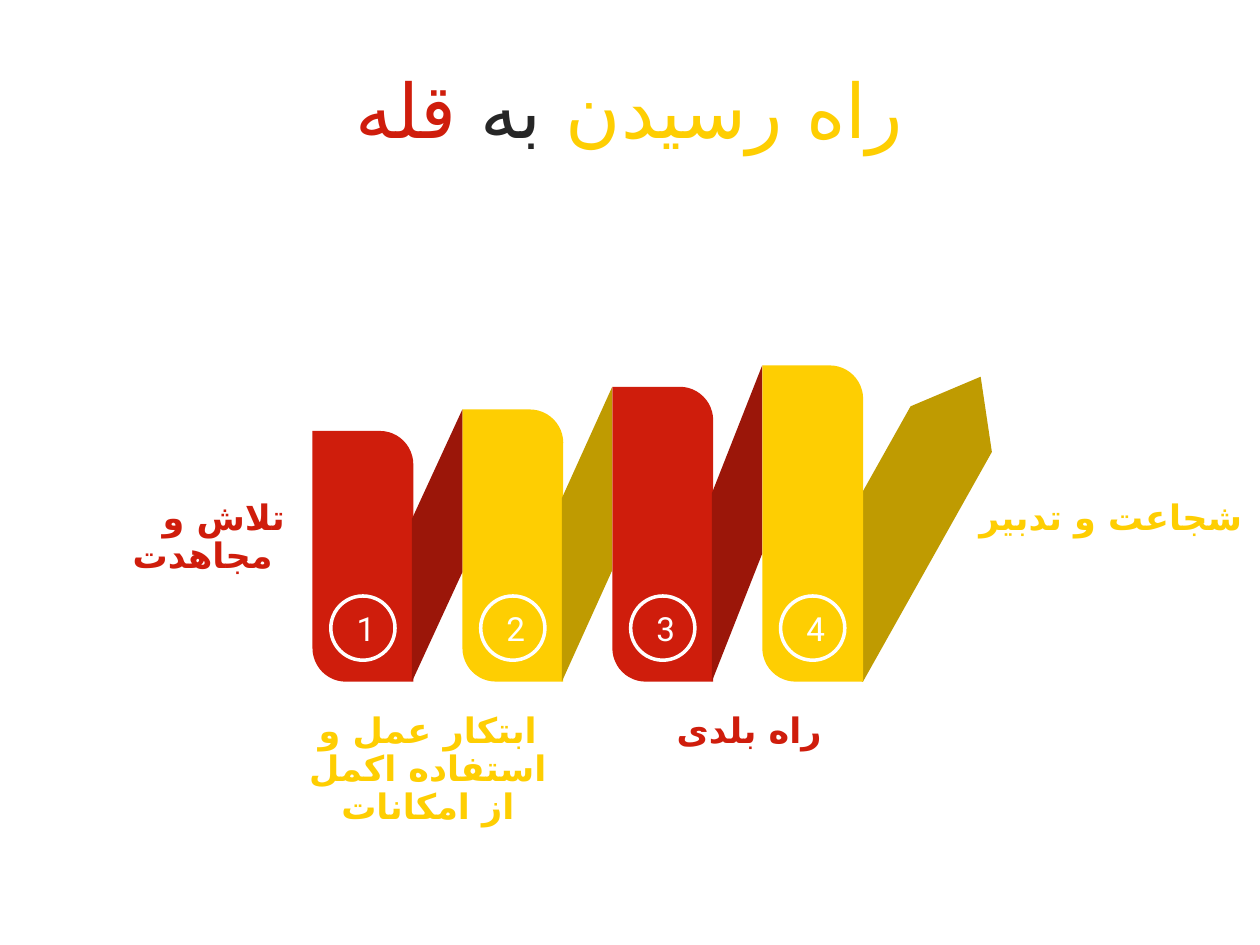
from dataclasses import dataclass

from lxml.etree import SubElement
from pptx import Presentation
from pptx.dml.color import RGBColor
from pptx.enum.shapes import MSO_SHAPE
from pptx.enum.text import MSO_ANCHOR, MSO_AUTO_SIZE, PP_ALIGN
from pptx.oxml.ns import qn
from pptx.util import Inches, Pt


@dataclass(frozen=True)
class Theme:
    red: str = "CF1D0C"
    dark_red: str = "9B1609"
    yellow: str = "FECE02"
    dark_yellow: str = "BF9B01"
    ink: str = "262626"
    white: str = "FFFFFF"
    font: str = "Roboto"
    script_font: str = "DejaVu Sans"
    title_size: int = 43
    label_size: int = 20
    number_size: int = 19


THEME = Theme()

BASELINE = 5.41
FIRST_LEFT = 2.48
STEP = 1.19
COLUMN_WIDTH = 0.8
FOLD_WIDTH = 0.4
COLUMN_HEIGHTS = (1.99, 2.16, 2.34, 2.51)
FOLD_SLANTS = (2.17, 2.21, 2.54)
COLUMN_COLORS = (THEME.red, THEME.yellow) * 2
FOLD_COLORS = (THEME.dark_red, THEME.dark_yellow, THEME.dark_red)
BADGE_SIZE = 0.51
BADGE_TOP = 4.73

TITLE_PARTS = (
    ("راه رسیدن ", THEME.yellow),
    ("به ", THEME.ink),
    ("قله", THEME.red),
)
LABELS = (
    ("راه بلدی", 4.87, 5.66, 0.31, THEME.red, PP_ALIGN.CENTER, True),
    ("ابتکار عمل و استفاده اکمل از امکانات", 2.32, 5.66, 0.61, THEME.yellow, PP_ALIGN.CENTER, True),
    ("شجاعت و تدبیر", 7.74, 3.97, 0.31, THEME.yellow, PP_ALIGN.CENTER, True),
    ("تلاش و مجاهدت ", 0.11, 3.97, 0.31, THEME.red, PP_ALIGN.RIGHT, False),
)


def format_span(span, size, color, bold=False):
    span.font.name = THEME.font
    span.font.size = Pt(size)
    span.font.bold = bold
    span.font.color.rgb = RGBColor.from_string(color)
    properties = span.font._element
    SubElement(properties, qn("a:cs")).set("typeface", THEME.script_font)


def set_margins(frame, horizontal=0, vertical=0):
    frame.margin_left = frame.margin_right = Inches(horizontal)
    frame.margin_top = frame.margin_bottom = Inches(vertical)


def add_title(page):
    title = page.shapes.title
    title.left, title.top = Inches(0.42), Inches(0.5)
    title.width, title.height = Inches(9.15), Inches(0.72)
    frame = title.text_frame
    frame.auto_size = MSO_AUTO_SIZE.NONE
    frame.vertical_anchor = MSO_ANCHOR.MIDDLE
    set_margins(frame)
    para = frame.paragraphs[0]
    para.alignment = PP_ALIGN.CENTER
    for text, color in TITLE_PARTS:
        span = para.add_run()
        span.text = text
        format_span(span, THEME.title_size, color)


def add_filled_shape(page, kind, left, top, width, height, color):
    shape = page.shapes.add_shape(kind, Inches(left), Inches(top), Inches(width), Inches(height))
    shape.shadow.inherit = False
    shape.fill.solid()
    shape.fill.fore_color.rgb = RGBColor.from_string(color)
    shape.line.fill.background()
    return shape


def add_turned_shape(page, kind, center, length, breadth, color, adjustments, angle=90, flip=False):
    left, top = center[0] - length / 2, center[1] - breadth / 2
    shape = add_filled_shape(page, kind, left, top, length, breadth, color)
    shape.rotation = angle
    for index, value in enumerate(adjustments):
        shape.adjustments[index] = value
    if flip:
        shape._element.spPr.find(qn("a:xfrm")).set("flipH", "1")


def add_arrow(page):
    add_turned_shape(page, MSO_SHAPE.PENTAGON, (7.155, 4.11), 2.57, 0.74,
                     THEME.dark_yellow, (0.645,), angle=119.3, flip=True)


def add_column(page, index):
    height = COLUMN_HEIGHTS[index]
    center = (FIRST_LEFT + index * STEP + COLUMN_WIDTH / 2, BASELINE - height / 2)
    add_turned_shape(page, MSO_SHAPE.ROUND_2_DIAG_RECTANGLE, center, height,
                     COLUMN_WIDTH, COLUMN_COLORS[index], (0.332, 0))


def add_fold(page, index):
    height = COLUMN_HEIGHTS[index + 1]
    center = (FIRST_LEFT + (index + 1) * STEP - FOLD_WIDTH / 2, BASELINE - height / 2)
    add_turned_shape(page, MSO_SHAPE.PARALLELOGRAM, center, height, FOLD_WIDTH,
                     FOLD_COLORS[index], (FOLD_SLANTS[index],), flip=True)


def add_badge(page, index):
    left = FIRST_LEFT + index * STEP + (COLUMN_WIDTH - BADGE_SIZE) / 2
    badge = add_filled_shape(page, MSO_SHAPE.OVAL, left, BADGE_TOP, BADGE_SIZE,
                             BADGE_SIZE, COLUMN_COLORS[index])
    badge.line.color.rgb = RGBColor.from_string(THEME.white)
    badge.line.width = Pt(2)
    frame = badge.text_frame
    frame.text = str(index + 1)
    frame.vertical_anchor = MSO_ANCHOR.MIDDLE
    set_margins(frame, 0.13, 0.07)
    para = frame.paragraphs[0]
    para.alignment = PP_ALIGN.CENTER
    format_span(para.runs[0], THEME.number_size, THEME.white)


def add_label(page, text, left, top, height, color, alignment, right_to_left):
    box = page.shapes.add_textbox(Inches(left), Inches(top), Inches(2.15), Inches(height))
    frame = box.text_frame
    frame.text = text
    frame.word_wrap = True
    frame.auto_size = MSO_AUTO_SIZE.SHAPE_TO_FIT_TEXT
    set_margins(frame)
    para = frame.paragraphs[0]
    para.alignment = alignment
    para.line_spacing = 0.9
    para.space_after = Pt(10)
    if right_to_left:
        para._p.get_or_add_pPr().set("rtl", "1")
    format_span(para.runs[0], THEME.label_size, color, bold=True)


def main():
    deck = Presentation()
    deck.slide_width, deck.slide_height = Inches(10), Inches(7.5)
    page = deck.slides.add_slide(deck.slide_layouts[5])
    add_title(page)
    add_arrow(page)
    for index in range(len(COLUMN_HEIGHTS)):
        add_column(page, index)
    for index in range(len(FOLD_SLANTS)):
        add_fold(page, index)
    for label in LABELS:
        add_label(page, *label)
    for index in range(len(COLUMN_HEIGHTS)):
        add_badge(page, index)
    deck.save("out.pptx")


if __name__ == "__main__":
    main()
